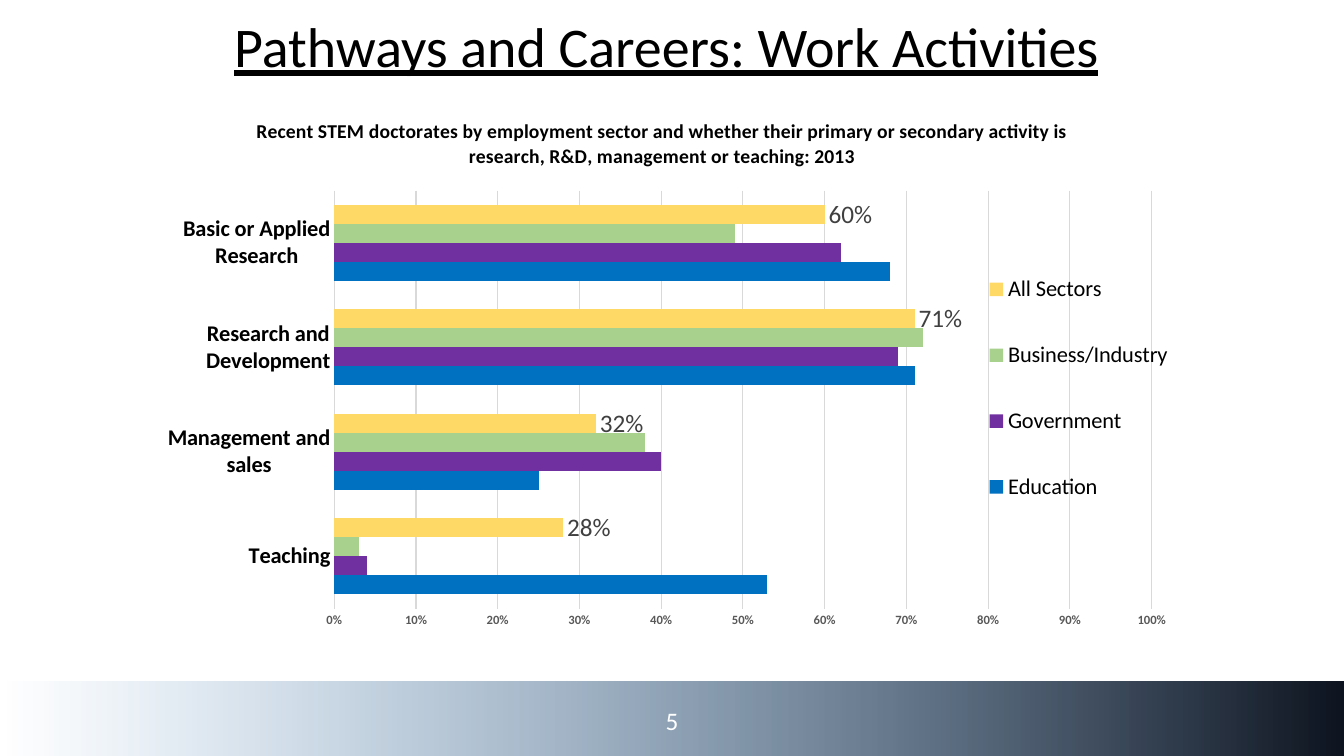
from lxml import etree
from pptx import Presentation
from pptx.chart.data import CategoryChartData
from pptx.dml.color import RGBColor
from pptx.enum.chart import XL_CHART_TYPE, XL_LABEL_POSITION, XL_LEGEND_POSITION, XL_TICK_MARK
from pptx.enum.shapes import MSO_SHAPE
from pptx.enum.text import MSO_ANCHOR, PP_ALIGN
from pptx.oxml.ns import qn
from pptx.util import Inches, Pt

BAR_CLUSTERED = XL_CHART_TYPE.BAR_CLUSTERED
OUTSIDE_END = XL_LABEL_POSITION.OUTSIDE_END
LEGEND_RIGHT = XL_LEGEND_POSITION.RIGHT
NO_TICK = XL_TICK_MARK.NONE
RECTANGLE = MSO_SHAPE.RECTANGLE
TOP, MIDDLE = MSO_ANCHOR.TOP, MSO_ANCHOR.MIDDLE
CENTER = PP_ALIGN.CENTER

FONT = "Calibri"
BLACK = RGBColor(0x00, 0x00, 0x00)
WHITE = RGBColor(0xFF, 0xFF, 0xFF)
BAND_START = RGBColor(0x2E, 0x75, 0xB6)
BAND_END = RGBColor(0x0E, 0x14, 0x20)
GRID_GRAY = RGBColor(0xD9, 0xD9, 0xD9)
AXIS_GRAY = RGBColor(0x59, 0x59, 0x59)
LABEL_GRAY = RGBColor(0x40, 0x40, 0x40)
BLUE = RGBColor(0x00, 0x70, 0xC0)
PURPLE = RGBColor(0x70, 0x30, 0xA0)
GREEN = RGBColor(0xA9, 0xD1, 0x8E)
YELLOW = RGBColor(0xFF, 0xD9, 0x66)

WIDTH, HEIGHT = 13.33, 7.5
BAND_BOX = (0, 6.76, WIDTH, 0.74)
TITLE_BOX = (0.48, 0.14, 12.26, 0.89)
CHART_BOX = (1.23, 0.91, 10.64, 5.55)

CHART_TITLE = (
    "Recent STEM doctorates by employment sector and whether their primary "
    "or secondary activity is research, R&D, management or teaching: 2013"
)
ACTIVITIES = ["Teaching", "Management and sales", "Research and Development", "Basic or Applied Research"]
SECTORS = [
    ("Education", (0.53, 0.25, 0.71, 0.68), BLUE),
    ("Government", (0.04, 0.40, 0.69, 0.62), PURPLE),
    ("Business/Industry", (0.03, 0.38, 0.72, 0.49), GREEN),
    ("All Sectors", (0.28, 0.32, 0.71, 0.60), YELLOW),
]


def style_font(font, size, color, bold=False):
    font.name = FONT
    font.size = Pt(size)
    font.bold = bold
    font.color.rgb = color


def set_layout(layout, **settings):
    manual = etree.SubElement(layout, qn("c:manualLayout"))
    for name, value in settings.items():
        etree.SubElement(manual, qn(f"c:{name}")).set("val", str(value))


def add_band(slide, box):
    left, top, width, height = box
    band = slide.shapes.add_shape(RECTANGLE, *map(Inches, box))
    band.shadow.inherit = False
    band.line.fill.background()
    band.fill.gradient()
    band.fill.gradient_angle = 0
    stops = band.fill.gradient_stops
    for stop, position, color in zip(stops, (0, 1), (BAND_START, BAND_END)):
        stop.position = position
        stop.color.rgb = color
    start_color = next(band.element.iter(qn("a:srgbClr")))
    etree.SubElement(start_color, qn("a:alpha")).set("val", "0")

    number_width, number_height = 3, 0.4
    number_box = (left + (width - number_width) / 2, top + 0.19, number_width, number_height)
    number = slide.shapes.add_textbox(*map(Inches, number_box))
    number.text_frame.word_wrap = True
    number.text_frame.vertical_anchor = MIDDLE
    paragraph = number.text_frame.paragraphs[0]
    paragraph.alignment = CENTER
    run = paragraph.add_run()
    run.text = "5"
    style_font(run.font, 18, WHITE)


def add_title(slide, box):
    title = slide.shapes.title
    title.left, title.top, title.width, title.height = map(Inches, box)
    title.text_frame.vertical_anchor = TOP
    paragraph = title.text_frame.paragraphs[0]
    paragraph.alignment = CENTER
    paragraph.line_spacing = 0.9
    run = paragraph.add_run()
    run.text = "Pathways and Careers: Work Activities"
    style_font(run.font, 40, BLACK)
    run.font.underline = True


def format_axes(chart):
    category_axis, value_axis = chart.category_axis, chart.value_axis
    for axis in (category_axis, value_axis):
        axis.major_tick_mark = axis.minor_tick_mark = NO_TICK
    style_font(category_axis.tick_labels.font, 16, BLACK, True)
    category_axis.format.line.color.rgb = GRID_GRAY
    category_axis.format.line.width = Pt(0.75)
    style_font(value_axis.tick_labels.font, 9, AXIS_GRAY, True)
    value_axis.tick_labels.number_format = "0%"
    value_axis.tick_labels.number_format_is_linked = False
    value_axis.minimum_scale, value_axis.maximum_scale = 0, 1
    value_axis.major_unit = 0.1
    value_axis.format.line.fill.background()
    grid_line = value_axis.major_gridlines.format.line
    grid_line.color.rgb = GRID_GRAY
    grid_line.width = Pt(0.75)


def format_bars(plot):
    plot.gap_width = 150
    plot.overlap = 0
    plot.vary_by_categories = False
    for series, (_, _, color) in zip(plot.series, SECTORS):
        series.format.fill.solid()
        series.format.fill.fore_color.rgb = color
    labels = plot.series[-1].data_labels
    labels.show_value = True
    labels.position = OUTSIDE_END
    labels.number_format = "0%"
    labels.number_format_is_linked = False
    style_font(labels.font, 18, LABEL_GRAY)


def add_activity_chart(slide, box):
    data = CategoryChartData(number_format="0%")
    data.categories = ACTIVITIES
    for name, values, _ in SECTORS:
        data.add_series(name, values)
    chart = slide.shapes.add_chart(BAR_CLUSTERED, *map(Inches, box), data).chart
    style_font(chart.font, 10, BLACK)
    format_axes(chart)
    format_bars(chart.plots[0])

    chart.has_title = True
    run = chart.chart_title.text_frame.paragraphs[0].add_run()
    run.text = CHART_TITLE
    style_font(run.font, 14, BLACK, True)
    title_element = chart.chart_title.format.parent if hasattr(chart.chart_title.format, "parent") else None
    title_element = chart.element.find(f".//{qn('c:title')}") if title_element is None else title_element
    set_layout(title_element.get_or_add_layout() if hasattr(title_element, "get_or_add_layout")
               else title_element.find(qn("c:layout")), xMode="edge", yMode="edge", x=0.12, y=0.04)

    chart.has_legend = True
    legend = chart.legend
    legend.position = LEGEND_RIGHT
    legend.include_in_layout = False
    style_font(legend.font, 16, BLACK)
    legend_element = chart.element.find(f".//{qn('c:legend')}")
    legend_layout = legend_element.find(qn("c:layout"))
    if legend_layout is None:
        legend_layout = etree.Element(qn("c:layout"))
        legend_element.find(qn("c:legendPos")).addnext(legend_layout)
    set_layout(legend_layout, xMode="edge", yMode="edge", x=0.8, y=0.26, w=0.18, h=0.54)

    plot_area = chart.element.find(f".//{qn('c:plotArea')}")
    plot_layout = plot_area.find(qn("c:layout"))
    if plot_layout is None:
        plot_layout = etree.Element(qn("c:layout"))
        plot_area.insert(0, plot_layout)
    set_layout(plot_layout, layoutTarget="inner", xMode="edge", yMode="edge",
               x=0.196, y=0.177, w=0.762, h=0.747)


def main():
    presentation = Presentation()
    presentation.slide_width, presentation.slide_height = Inches(WIDTH), Inches(HEIGHT)
    slide = presentation.slides.add_slide(presentation.slide_layouts[5])
    add_band(slide, BAND_BOX)
    add_title(slide, TITLE_BOX)
    add_activity_chart(slide, CHART_BOX)
    presentation.save("out.pptx")


if __name__ == "__main__":
    main()
